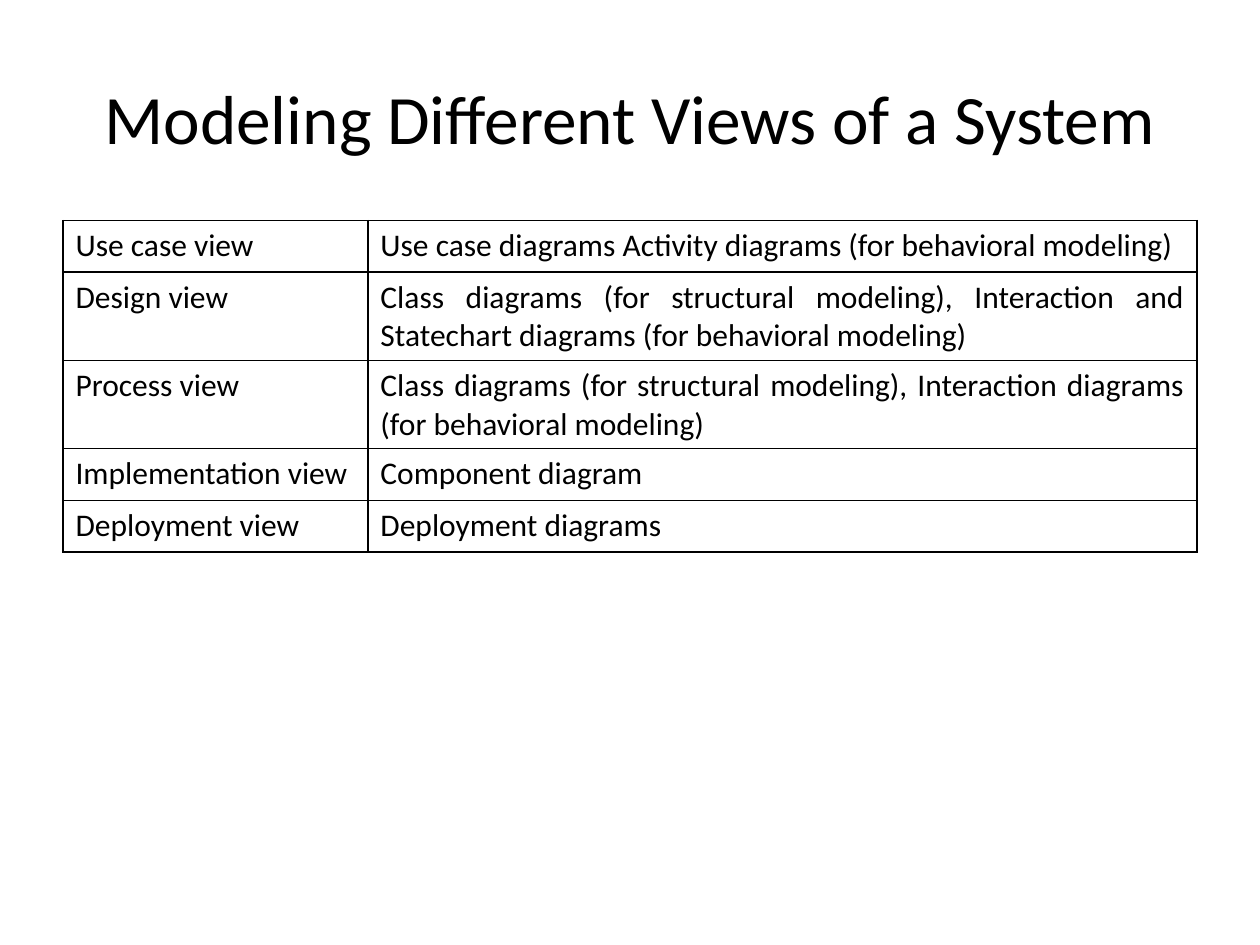
from lxml import etree
from pptx import Presentation
from pptx.dml.color import RGBColor
from pptx.enum.text import MSO_ANCHOR, PP_ALIGN
from pptx.oxml.ns import qn
from pptx.util import Inches, Pt

MIDDLE = MSO_ANCHOR.MIDDLE
LEFT, CENTER, JUSTIFY = PP_ALIGN.LEFT, PP_ALIGN.CENTER, PP_ALIGN.JUSTIFY
COLORS = {"ink": "000000", "paper": "FFFFFF"}
WIDTH, HEIGHT = Inches(10), Inches(7.5)
VIEWS = [
    ("Use case view", "Use case diagrams Activity diagrams (for behavioral modeling)"),
    ("Design view", "Class diagrams (for structural modeling), Interaction and "
                    "Statechart diagrams (for behavioral modeling)"),
    ("Process view", "Class diagrams (for structural modeling), Interaction diagrams "
                     "(for behavioral modeling)"),
    ("Implementation view", "Component diagram"),
    ("Deployment view", "Deployment diagrams"),
]


class SlideBuilder:
    """Hold the style and the current slide, and place elements by shares of its size."""

    def __init__(self, page, font="Calibri"):
        self.page = page
        self.font = font
        fill = page.background.fill
        fill.solid()
        fill.fore_color.rgb = RGBColor.from_string(COLORS["paper"])

    def set_text(self, frame, text, size, align):
        frame.text = text
        para = frame.paragraphs[0]
        para.alignment = align
        for span in para.runs:
            span.font.name = self.font
            span.font.size = Pt(size)
            span.font.color.rgb = RGBColor.from_string(COLORS["ink"])

    def title(self, text, left, top, width, height, size):
        box = self.page.shapes.add_textbox(
            int(left * WIDTH), int(top * HEIGHT), int(width * WIDTH), int(height * HEIGHT))
        box.text_frame.word_wrap = True
        box.text_frame.vertical_anchor = MIDDLE
        self.set_text(box.text_frame, text, size, CENTER)

    def border(self, cell, points=1):
        properties = cell._tc.get_or_add_tcPr()
        for index, side in enumerate(("a:lnL", "a:lnR", "a:lnT", "a:lnB")):
            line = etree.Element(qn(side), w=str(Pt(points)))
            fill = etree.SubElement(line, qn("a:solidFill"))
            etree.SubElement(fill, qn("a:srgbClr"), val=COLORS["ink"])
            properties.insert(index, line)

    def table(self, rows, left, top, columns, row_height, size):
        frame = self.page.shapes.add_table(
            len(rows), len(columns), int(left * WIDTH), int(top * HEIGHT),
            int(sum(columns) * WIDTH), int(len(rows) * row_height * HEIGHT))
        table = frame.table
        table.first_row = table.horz_banding = False
        for column, share in zip(table.columns, columns):
            column.width = int(share * WIDTH)
        for row, texts in zip(table.rows, rows):
            for cell, text, align in zip(row.cells, texts, (LEFT, JUSTIFY)):
                cell.fill.background()
                self.set_text(cell.text_frame, text, size, align)
                self.border(cell)


def main():
    deck = Presentation()
    deck.slide_width, deck.slide_height = WIDTH, HEIGHT
    builder = SlideBuilder(deck.slides.add_slide(deck.slide_layouts[6]))
    builder.title("Modeling Different Views of a System", 0.05, 0.04, 0.9, 1 / 6, 39.6)
    builder.table(VIEWS, 0.05, 7 / 30, (0.242, 0.658), 0.41 / 7.5, 18)
    deck.save("out.pptx")


if __name__ == "__main__":
    main()
